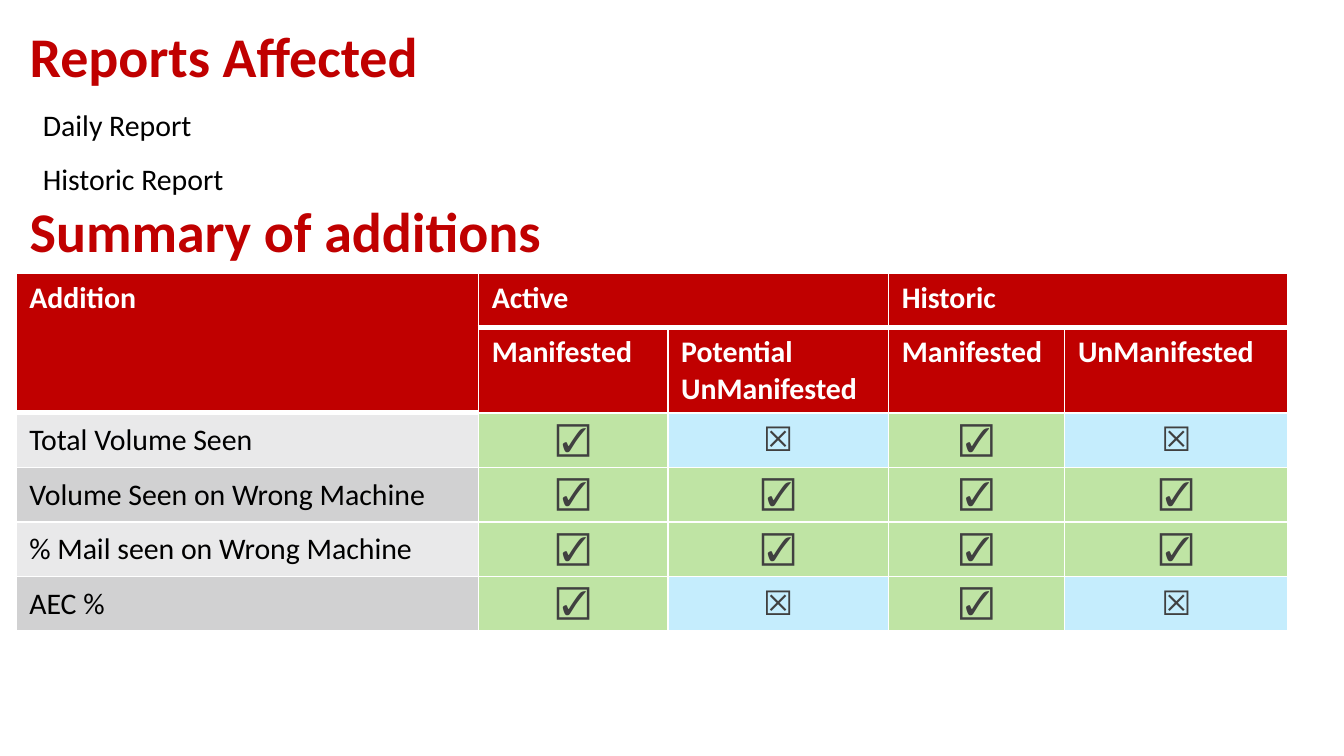
from dataclasses import dataclass

from lxml import etree
from pptx import Presentation
from pptx.dml.color import RGBColor
from pptx.enum.text import MSO_ANCHOR, MSO_AUTO_SIZE, PP_ALIGN
from pptx.oxml.ns import qn
from pptx.util import Cm, Pt

TOP = MSO_ANCHOR.TOP
FIXED = MSO_AUTO_SIZE.NONE
GROW = MSO_AUTO_SIZE.SHAPE_TO_FIT_TEXT
LEFT, MID = PP_ALIGN.LEFT, PP_ALIGN.CENTER
HUES = {
    "red": "C00000", "white": "FFFFFF", "black": "000000", "mark": "404040",
    "pale": "E9E9EA", "grey": "D1D1D2", "green": "BFE4A4", "blue": "C5EDFD",
}


@dataclass
class Style:
    size: int
    hue: str
    bold: bool = False
    face: str = "Calibri"
    align: int = LEFT
    line: float = 1.0
    after: int = 0


@dataclass
class Row:
    label: str
    marks: str


HEAD = Style(30, "red", True, line=0.8)
BODY = Style(16, "black", line=1.07, after=8)
TITLE = Style(16, "white", True)
YES = Style(18, "mark", face="Arial", align=MID)
NO = Style(18, "mark", align=MID)
MARKS = {"☑": (YES, "green"), "☒": (NO, "blue")}

WIDTHS = [8.74, 3.58, 4.17, 3.33, 4.22]
HIGH = 1.03
GROUPS = {0: "Addition", 1: "Active", 3: "Historic"}
HEADS = ["Manifested", "Potential UnManifested", "Manifested", "UnManifested"]
ROWS = [
    Row("Total Volume Seen", "☑☒☑☒"),
    Row("Volume Seen on Wrong Machine", "☑☑☑☑"),
    Row("% Mail seen on Wrong Machine", "☑☑☑☑"),
    Row("AEC %", "☑☒☑☒"),
]


def assign(item: object, values: dict) -> None:
    for name, value in values.items():
        setattr(item, name, value)


def write(frame, lines: list[str], style: Style) -> None:
    for i, text in enumerate(lines):
        par = frame.paragraphs[0] if i == 0 else frame.add_paragraph()
        assign(par, {"alignment": style.align, "line_spacing": style.line,
                     "space_before": Pt(0), "space_after": Pt(style.after)})
        run = par.add_run()
        run.text = text
        assign(run.font, {"name": style.face, "size": Pt(style.size),
                          "bold": style.bold})
        run.font.color.rgb = RGBColor.from_string(HUES[style.hue])


def place(shape, box: tuple, lines: list[str], style: Style,
          **extra) -> None:
    sides = ("left", "top", "width", "height")
    assign(shape, {side: Cm(n) for side, n in zip(sides, box)})
    assign(shape.text_frame, {"word_wrap": True, "vertical_anchor": TOP,
                              **extra})
    write(shape.text_frame, lines, style)


def edge(cell, base: int) -> None:
    props = cell._tc.get_or_add_tcPr()
    for i, side in enumerate("LRTB"):
        wide = base if side == "B" else 1
        line = etree.Element(qn(f"a:ln{side}"), w=str(Pt(wide)))
        fill = etree.SubElement(line, qn("a:solidFill"))
        etree.SubElement(fill, qn("a:srgbClr"), val=HUES["white"])
        props.insert(i, line)


def paint(cell, hue: str, base: int = 1) -> None:
    cell.fill.solid()
    cell.fill.fore_color.rgb = RGBColor.from_string(HUES[hue])
    edge(cell, base)


def fill(cell, text: str, style: Style, hue: str) -> None:
    write(cell.text_frame, [text], style)
    paint(cell, hue)


def grid(slide) -> None:
    count = len(ROWS) + 2
    table = slide.shapes.add_table(
        count, len(WIDTHS), Cm(0.3), Cm(5.16),
        Cm(sum(WIDTHS)), Cm(HIGH * count)).table
    for col, wide in zip(table.columns, WIDTHS):
        col.width = Cm(wide)
    for row in table.rows:
        row.height = Cm(HIGH)

    for c in range(len(WIDTHS)):
        paint(table.cell(0, c), "red", 3)
    paint(table.cell(1, 0), "red", 3)
    for c, text in GROUPS.items():
        cell = table.cell(0, c)
        cell.merge(table.cell(0, c + 1) if c else table.cell(1, c))
        write(cell.text_frame, [text], TITLE)
    for c, text in enumerate(HEADS, 1):
        fill(table.cell(1, c), text, TITLE, "red")

    for r, row in enumerate(ROWS, 2):
        fill(table.cell(r, 0), row.label, BODY, ("pale", "grey")[r % 2])
        for c, mark in enumerate(row.marks, 1):
            fill(table.cell(r, c), mark, *MARKS[mark])


def main() -> None:
    deck = Presentation()
    assign(deck, {"slide_width": Cm(25.4), "slide_height": Cm(14.28)})
    slide = deck.slides.add_slide(deck.slide_layouts[5])
    bare = {f"margin_{side}": 0 for side in ("left", "right", "top", "bottom")}
    bare["auto_size"] = FIXED

    def text():
        return slide.shapes.add_textbox(0, 0, 0, 0)

    place(slide.shapes.title, (0.56, 0.66, 21.97, 0.86),
          ["Reports Affected"], HEAD, **bare)
    place(text(), (0.56, 1.85, 23.88, 1.98),
          ["Daily Report", "Historic Report"], BODY, auto_size=GROW)
    place(text(), (0.56, 3.96, 21.97, 0.86),
          ["Summary of additions"], HEAD, **bare)
    grid(slide)
    deck.save("out.pptx")


if __name__ == "__main__":
    main()
